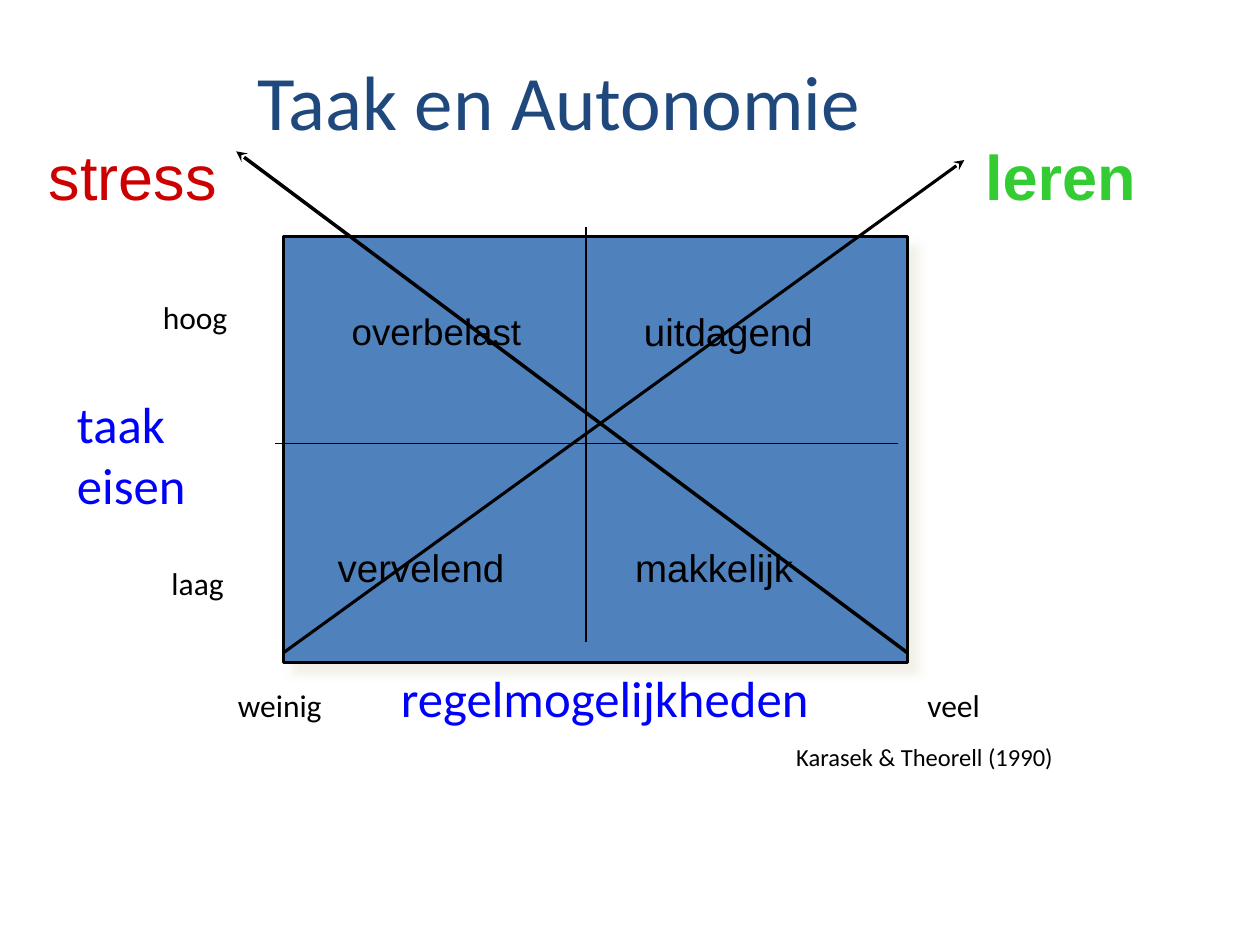
from lxml import etree
from pptx import Presentation
from pptx.dml.color import RGBColor
from pptx.enum import shapes, text
from pptx.oxml.ns import qn
from pptx.util import Pt

COLORS = {
    "title": "1F497D", "matrix": "4F81BD", "black": "000000", "axis": "0000FF",
    "stress": "CC0000", "learning": "33CC33", "shadow": "EEECE1",
}
TITLE = ("Taak en Autonomie ", (49, 16.5, 551, 81), 44, "Calibri", "title")
MATRIX = (162, 135, 356.5, 243.5)

# text, (left, top, width, height), size, font, colour
LABELS = [
    ("taak eisen", (37.5, 221, 103, 77), 29, "Calibri", "axis"),
    ("hoog", (86.5, 167, 59, 28), 18, "Calibri", "black"),
    ("laag", (91.5, 319, 54, 28), 18, "Calibri", "black"),
    (" regelmogelijkheden", (216, 378, 253.5, 42), 29, "Calibri", "axis"),
    ("weinig", (129.5, 389, 81, 28), 18, "Calibri", "black"),
    ("veel", (523.5, 389, 56, 28), 18, "Calibri", "black"),
    ("overbelast", (194.5, 173, 113, 32), 21, "Arial", "black"),
    ("uitdagend", (361.5, 173, 140.5, 32), 22, "Arial", "black"),
    ("vervelend", (186.5, 307.5, 121, 32), 22, "Arial", "black"),
    ("makkelijk", (356.5, 307.5, 129.5, 32), 22, "Arial", "black"),
    ("stress", (21.5, 75.5, 124, 50), 36, "Arial", "stress"),
    ("leren", (556.5, 75.5, 120, 50), 36, "Arial", "learning"),
    ("Karasek & Theorell (1990)", (448.5, 421, 188.5, 24), 14, "Calibri", "black"),
]
# start, end, width
DIVIDERS = [((335, 129.5), (335, 367), 1), ((157, 253.5), (513, 253.5), 1)]
ARROWS = [((518.5, 373), (135, 86.5), 2), ((162, 373), (551, 91.5), 1.75)]


def color(name):
    return RGBColor.from_string(COLORS[name])


def add_label(page, words, area, size, font, tint):
    box = page.shapes.add_textbox(*map(Pt, area))
    frame = box.text_frame
    frame.word_wrap = True
    frame.auto_size = text.MSO_AUTO_SIZE.SHAPE_TO_FIT_TEXT
    frame.margin_left = frame.margin_right = Pt(6.5)
    frame.margin_top = frame.margin_bottom = Pt(3.25)
    para = frame.paragraphs[0]
    para.text = words
    para.font.size, para.font.name = Pt(size), font
    para.font.color.rgb = color(tint)
    para.font.bold = tint == "learning"
    return box


def add_title(page):
    frame = add_label(page, *TITLE).text_frame
    frame.auto_size = text.MSO_AUTO_SIZE.NONE
    frame.vertical_anchor = text.MSO_ANCHOR.MIDDLE
    frame.paragraphs[0].alignment = text.PP_ALIGN.CENTER


def add_matrix(page):
    matrix = page.shapes.add_shape(shapes.MSO_SHAPE.RECTANGLE, *map(Pt, MATRIX))
    matrix.fill.solid()
    matrix.fill.fore_color.rgb = color("matrix")
    matrix.line.color.rgb = color("black")
    matrix.line.width = Pt(1.5)
    matrix.shadow.inherit = False
    effects = matrix._element.spPr.find(qn("a:effectLst"))
    shadow = etree.SubElement(effects, qn("a:outerShdw"), blurRad=str(Pt(5)),
                              dist=str(Pt(8.5)), dir=str(45 * 60000),
                              algn="ctr", rotWithShape="0")
    tint = etree.SubElement(shadow, qn("a:srgbClr"), val=COLORS["shadow"])
    etree.SubElement(tint, qn("a:alpha"), val="75000")


def add_line(page, start, end, width, arrow=False):
    line = page.shapes.add_connector(shapes.MSO_CONNECTOR.STRAIGHT, *map(Pt, start + end))
    line.line.color.rgb = color("black")
    line.line.width = Pt(width)
    if arrow:
        etree.SubElement(line.line._get_or_add_ln(), qn("a:tailEnd"), type="stealth")
    etree.SubElement(line._element.spPr, qn("a:effectLst"))


def main():
    deck = Presentation()
    deck.slide_width, deck.slide_height = Pt(720), Pt(540)
    page = deck.slides.add_slide(deck.slide_layouts[6])
    add_title(page)
    add_matrix(page)
    for divider in DIVIDERS:
        add_line(page, *divider)
    for label in LABELS:
        add_label(page, *label)
    for arrow in ARROWS:
        add_line(page, *arrow, arrow=True)
    deck.save("out.pptx")


if __name__ == "__main__":
    main()
